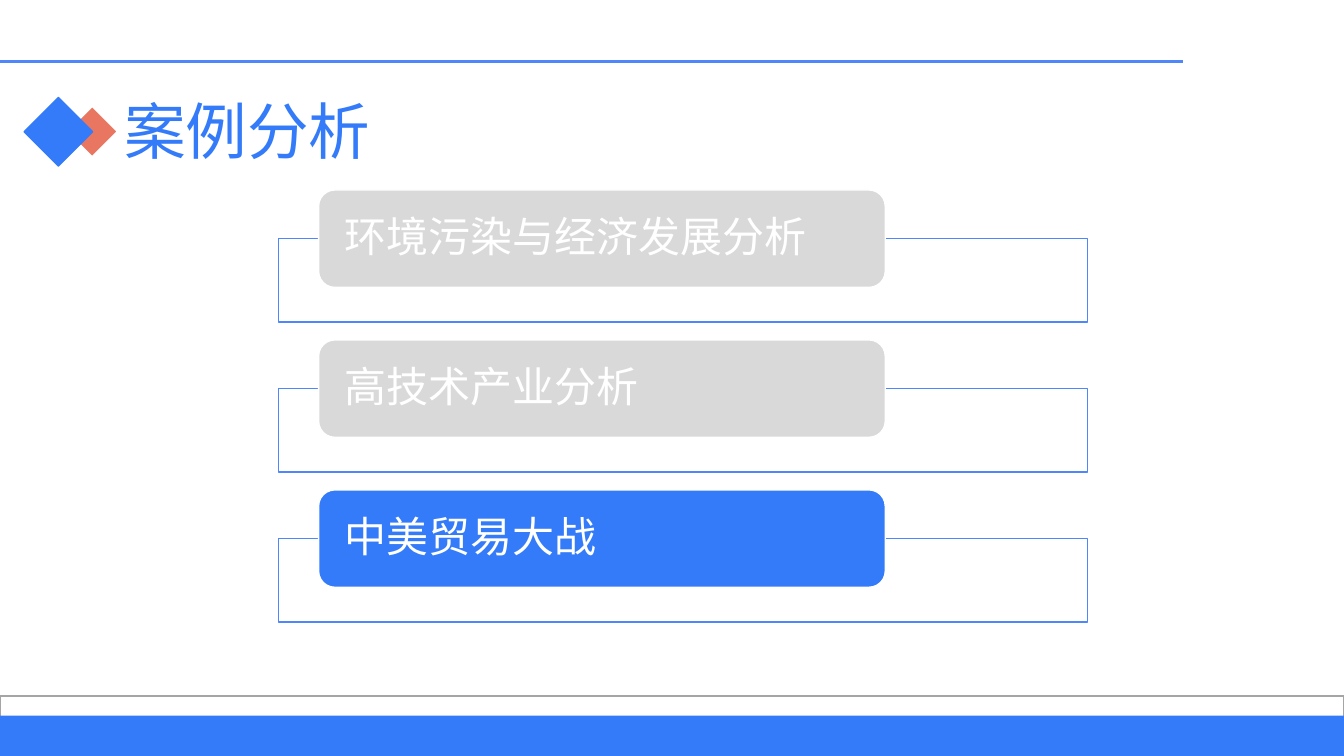
from lxml.etree import SubElement
from pptx import Presentation
from pptx.dml.color import RGBColor
from pptx.enum.shapes import MSO_CONNECTOR, MSO_SHAPE as Shape
from pptx.enum.text import MSO_ANCHOR, PP_ALIGN
from pptx.oxml.ns import qn
from pptx.util import Pt

COLORS = {
    "blue": "347BF9",
    "outline": "4F86F9",
    "coral": "E87660",
    "muted": "D9D9D9",
    "gray": "A5A5A5",
    "white": "FFFFFF",
}


def add_block(kind, left, top, width, height, fill, line=None, weight=1):
    block = slide.shapes.add_shape(kind, Pt(left), Pt(top), Pt(width), Pt(height))
    block.shadow.inherit = False
    block.fill.solid()
    block.fill.fore_color.rgb = RGBColor.from_string(COLORS[fill])
    if line:
        block.line.color.rgb = RGBColor.from_string(COLORS[line])
        block.line.width = Pt(weight)
    else:
        block.line.fill.background()
    return block


def write(target, text, size, font, color, inset=7.2, inset_y=3.6):
    frame = target.text_frame
    frame.word_wrap = True
    frame.vertical_anchor = MSO_ANCHOR.MIDDLE
    frame.margin_left = frame.margin_right = Pt(inset)
    frame.margin_top = frame.margin_bottom = Pt(inset_y)
    paragraph = frame.paragraphs[0]
    paragraph.alignment = PP_ALIGN.LEFT
    paragraph.line_spacing = 0.9
    run = paragraph.add_run()
    run.text = text
    run.font.size = Pt(size)
    run.font.name = font
    run.font.color.rgb = RGBColor.from_string(COLORS[color])


prs = Presentation()
prs.slide_width, prs.slide_height = Pt(960), Pt(540)
slide = prs.slides.add_slide(prs.slide_layouts[5])

add_block(Shape.RECTANGLE, 0, 497, 960, 43, "white", "gray", 1.5)
add_block(Shape.RECTANGLE, 0, 511.2, 960, 28.8, "blue")

header_rule = slide.shapes.add_connector(
    MSO_CONNECTOR.STRAIGHT, Pt(0), Pt(43.8), Pt(845), Pt(43.8)
)
header_rule.line.color.rgb = RGBColor.from_string(COLORS["outline"])
header_rule.line.width = Pt(2.25)
SubElement(header_rule._element.spPr, qn("a:effectLst"))

add_block(Shape.DIAMOND, 47.5, 75.6, 36.7, 36.7, "coral", "white", 1.5)
add_block(Shape.DIAMOND, 17.2, 69.6, 49, 49, "blue", "blue")

title = slide.shapes.title
title.left, title.top, title.width, title.height = Pt(81.4), Pt(58.3), Pt(812), Pt(75)
write(title, "案例分析", size=44, font="Montserrat", color="blue")

cases = [
    ("环境污染与经济发展分析", "muted"),
    ("高技术产业分析", "muted"),
    ("中美贸易大战", "blue"),
]
first_top, pitch = 135.7, 107.1
for row, (case, fill) in enumerate(cases):
    top = first_top + row * pitch
    add_block(Shape.RECTANGLE, 198.8, top + 34.6, 578.2, 59.8, "white", "outline")
    label = add_block(Shape.ROUNDED_RECTANGLE, 227.6, top, 404.8, 69.6, fill, "white")
    write(label, case, size=30, font="Arial", color="white", inset=15.2, inset_y=0)

prs.save("out.pptx")
